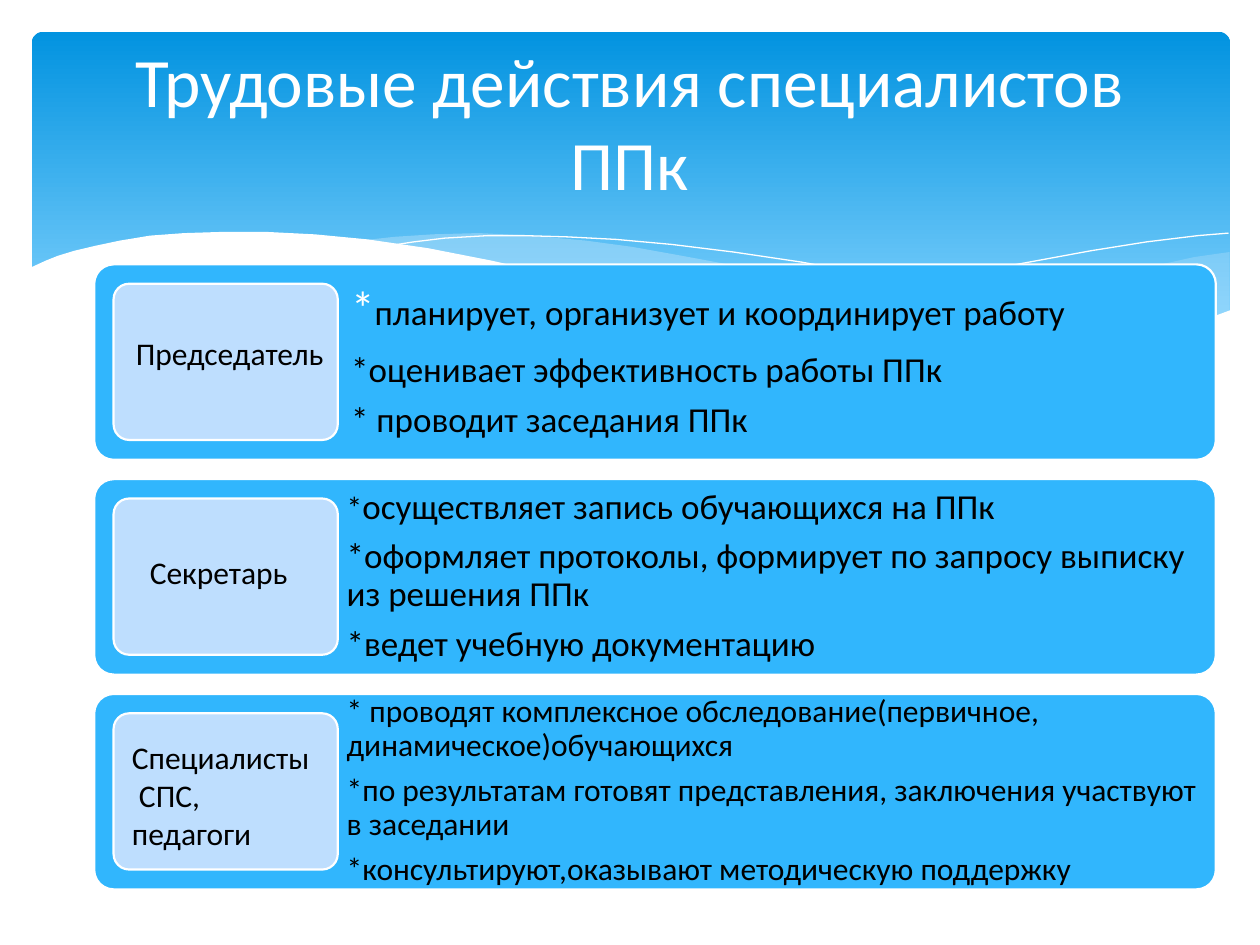
import lxml.etree
import pptx
import pptx.dml.color
import pptx.enum.shapes
import pptx.enum.text
import pptx.oxml.ns
import pptx.util

Cm = pptx.util.Cm
Pt = pptx.util.Pt
RGBColor = pptx.dml.color.RGBColor
ANCHOR = pptx.enum.text.MSO_ANCHOR
AUTO_SIZE = pptx.enum.text.MSO_AUTO_SIZE

WHITE = RGBColor(0xFF, 0xFF, 0xFF)
BLACK = RGBColor(0x00, 0x00, 0x00)
SKY_DARK = RGBColor(0x02, 0x93, 0xE0)
SKY_LIGHT = RGBColor(0x83, 0xD3, 0xFE)
WAVE = RGBColor(0xC6, 0xE7, 0xFC)
ROW_BLUE = RGBColor(0x31, 0xB6, 0xFD)
LABEL_BLUE = RGBColor(0xBE, 0xDE, 0xFE)
FONT = "Calibri"

# Wave outlines, in steps of 0.0254 cm
WAVE_STEP = Cm(0.0254)
RIGHT_WAVE = [
    (976, 200), (948, 204), (921, 210), (891, 216), (861, 223), (805, 237),
    (753, 248), (706, 257), (661, 265), (691, 269), (719, 272), (745, 275),
    (781, 277), (814, 278), (854, 276), (889, 272), (921, 265), (949, 257),
    (976, 247)]
MIDDLE_WAVE = [
    (893, 273), (866, 269), (807, 260), (741, 247), (668, 231), (629, 222),
    (584, 211), (541, 203), (502, 196), (465, 191), (420, 187), (380, 185),
    (344, 186), (313, 188), (286, 191), (323, 196), (362, 203), (404, 211),
    (449, 222), (530, 240), (601, 255), (650, 264), (695, 270), (736, 275),
    (773, 277), (807, 278), (848, 277), (876, 275)]
LONG_CURVE = [
    (309, 195), (328, 192), (353, 189), (387, 187), (416, 187), (450, 188),
    (489, 190), (533, 194), (582, 200), (636, 208), (695, 219), (760, 233),
    (831, 251), (907, 272)]
SHORT_CURVE = [
    (613, 257), (653, 246), (695, 235), (748, 223), (806, 210), (866, 199),
    (910, 192), (951, 187), (975, 185)]
WHITE_WAVE = [
    (977, 246), (950, 256), (920, 265), (887, 271), (850, 275), (809, 277),
    (761, 275), (708, 270), (648, 262), (603, 254), (555, 245), (503, 233),
    (447, 220), (391, 207), (340, 197), (292, 190), (250, 186), (211, 184),
    (177, 184), (146, 185), (119, 187), (95, 191), (76, 195), (59, 199),
    (46, 203), (36, 207), (23, 213), (23, 329), (977, 329)]

# Rows: label lines, label box (left, top, width, height), inset, text size,
# size and colour of the first asterisk, duties
ROWS = [
    (["Председатель"], (2.49, 6.6, 4.62, 1.02), 0.27, 20, 27, WHITE,
     ["*планирует, организует и координирует работу",
      "*оценивает эффективность работы ППк",
      "* проводит заседания ППк"]),
    (["Секретарь"], (2.77, 11.02, 3.45, 1.02), 0.18, 20, 18, BLACK,
     ["*осуществляет запись обучающихся на ППк",
      "*оформляет протоколы, формирует по запросу выписку из решения ППк",
      "*ведет учебную документацию"]),
    (["Специалисты", " СПС,", "педагоги"], (2.41, 14.76, 4.17, 2.57), 0.18,
     18, 18, BLACK,
     ["* проводят комплексное обследование(первичное, "
      "динамическое)обучающихся",
      "*по результатам готовят представления, заключения участвуют "
      "в заседании",
      "*консультируют,оказывают методическую поддержку"]),
]
ROW_LEFT, ROW_TOP, ROW_WIDTH, ROW_HEIGHT = 1.9, 5.33, 22.61, 3.94
ROW_PITCH = 4.33
LABEL_MARGIN, LABEL_WIDTH, LABEL_HEIGHT = 0.39, 4.52, 3.15
DUTIES_LEFT = ROW_LEFT + LABEL_MARGIN + LABEL_WIDTH


def add_run(paragraph, text, size, color):
    run = paragraph.add_run()
    run.text = text
    run.font.name = FONT
    run.font.size = Pt(size)
    run.font.color.rgb = color


def add_rounded_box(slide, box, radius):
    shape = slide.shapes.add_shape(
        pptx.enum.shapes.MSO_SHAPE.ROUNDED_RECTANGLE, *map(Cm, box))
    shape.adjustments[0] = radius
    shape.shadow.inherit = False
    return shape


def add_panel(slide, box, color):
    panel = add_rounded_box(slide, box, 0.1)
    panel.fill.solid()
    panel.fill.fore_color.rgb = color
    panel.line.color.rgb = WHITE
    panel.line.width = Pt(1.25)


def add_outline(slide, points, closed):
    builder = slide.shapes.build_freeform(*points[0], scale=WAVE_STEP)
    builder.add_line_segments(points[1:], close=closed)
    shape = builder.convert_to_shape()
    shape.shadow.inherit = False
    return shape


def add_wave(slide, points, color, opacity=100):
    wave = add_outline(slide, points, True)
    wave.fill.solid()
    wave.fill.fore_color.rgb = color
    wave.line.fill.background()
    if opacity < 100:
        color_element = wave.fill._xPr.find(".//" + pptx.oxml.ns.qn("a:srgbClr"))
        alpha = lxml.etree.SubElement(color_element, pptx.oxml.ns.qn("a:alpha"))
        alpha.set("val", str(opacity * 1000))


def add_curve(slide, points):
    curve = add_outline(slide, points, False)
    curve.fill.background()
    curve.line.color.rgb = WHITE
    curve.line.width = Pt(0)


def add_header(slide):
    header = add_rounded_box(slide, (0.64, 0.64, 24.16, 6.86), 0.034)
    header.line.fill.background()
    header.fill.gradient()
    header.fill.gradient_angle = 270
    stops = header.fill.gradient_stops
    for stop, position, color in zip(stops, (0, 0.9), (SKY_DARK, SKY_LIGHT)):
        stop.position = position
        stop.color.rgb = color
    add_wave(slide, RIGHT_WAVE, WAVE, 29)
    add_wave(slide, MIDDLE_WAVE, WAVE, 40)
    add_curve(slide, LONG_CURVE)
    add_curve(slide, SHORT_CURVE)
    add_wave(slide, WHITE_WAVE, WHITE)


def add_title(slide, text):
    title = slide.shapes.title
    title.left, title.top, title.width, title.height = map(
        Cm, (1.27, 0.94, 22.86, 3))
    frame = title.text_frame
    frame.auto_size = AUTO_SIZE.NONE
    frame.vertical_anchor = ANCHOR.MIDDLE
    paragraph = frame.paragraphs[0]
    paragraph.alignment = pptx.enum.text.PP_ALIGN.CENTER
    add_run(paragraph, text, 39.6, WHITE)
    # Bring the title in front of the header
    slide.shapes._spTree.append(title._element)


def add_text_box(slide, box, count):
    """Return the frame of a text box and its empty paragraphs."""
    frame = slide.shapes.add_textbox(*map(Cm, box)).text_frame
    for _ in range(count - 1):
        frame.add_paragraph()
    return frame, frame.paragraphs


def add_duties(slide, top, inset, size, star_size, star_color, duties):
    box = (DUTIES_LEFT, top, ROW_LEFT + ROW_WIDTH - DUTIES_LEFT, ROW_HEIGHT)
    frame, paragraphs = add_text_box(slide, box, len(duties))
    frame.word_wrap = True
    frame.vertical_anchor = ANCHOR.MIDDLE
    frame.margin_left = frame.margin_right = Cm(inset)
    frame.margin_top = frame.margin_bottom = Cm(inset)
    for index, (paragraph, duty) in enumerate(zip(paragraphs, duties)):
        first_size = size
        if index == 0 and (star_size, star_color) != (size, BLACK):
            first_size = star_size
            add_run(paragraph, duty[0], star_size, star_color)
            duty = duty[1:]
        add_run(paragraph, duty, size, BLACK)
        paragraph.line_spacing = 0.9
        paragraph.space_after = Pt(0.35 * first_size)


def add_label(slide, box, lines):
    frame, paragraphs = add_text_box(slide, box, len(lines))
    frame.word_wrap = False
    frame.auto_size = AUTO_SIZE.SHAPE_TO_FIT_TEXT
    for paragraph, line in zip(paragraphs, lines):
        add_run(paragraph, line, 18, BLACK)


def main():
    presentation = pptx.Presentation()
    presentation.slide_width, presentation.slide_height = Cm(25.4), Cm(19.05)
    slide = presentation.slides.add_slide(presentation.slide_layouts[5])

    add_header(slide)
    add_title(slide, "Трудовые действия специалистов ППк")

    # One row per role
    for index, (label, label_box, *duties) in enumerate(ROWS):
        top = ROW_TOP + index * ROW_PITCH
        add_panel(slide, (ROW_LEFT, top, ROW_WIDTH, ROW_HEIGHT), ROW_BLUE)
        add_duties(slide, top, *duties)
        add_panel(slide, (ROW_LEFT + LABEL_MARGIN, top + LABEL_MARGIN,
                          LABEL_WIDTH, LABEL_HEIGHT), LABEL_BLUE)
        add_label(slide, label_box, label)

    presentation.save("out.pptx")


if __name__ == "__main__":
    main()
